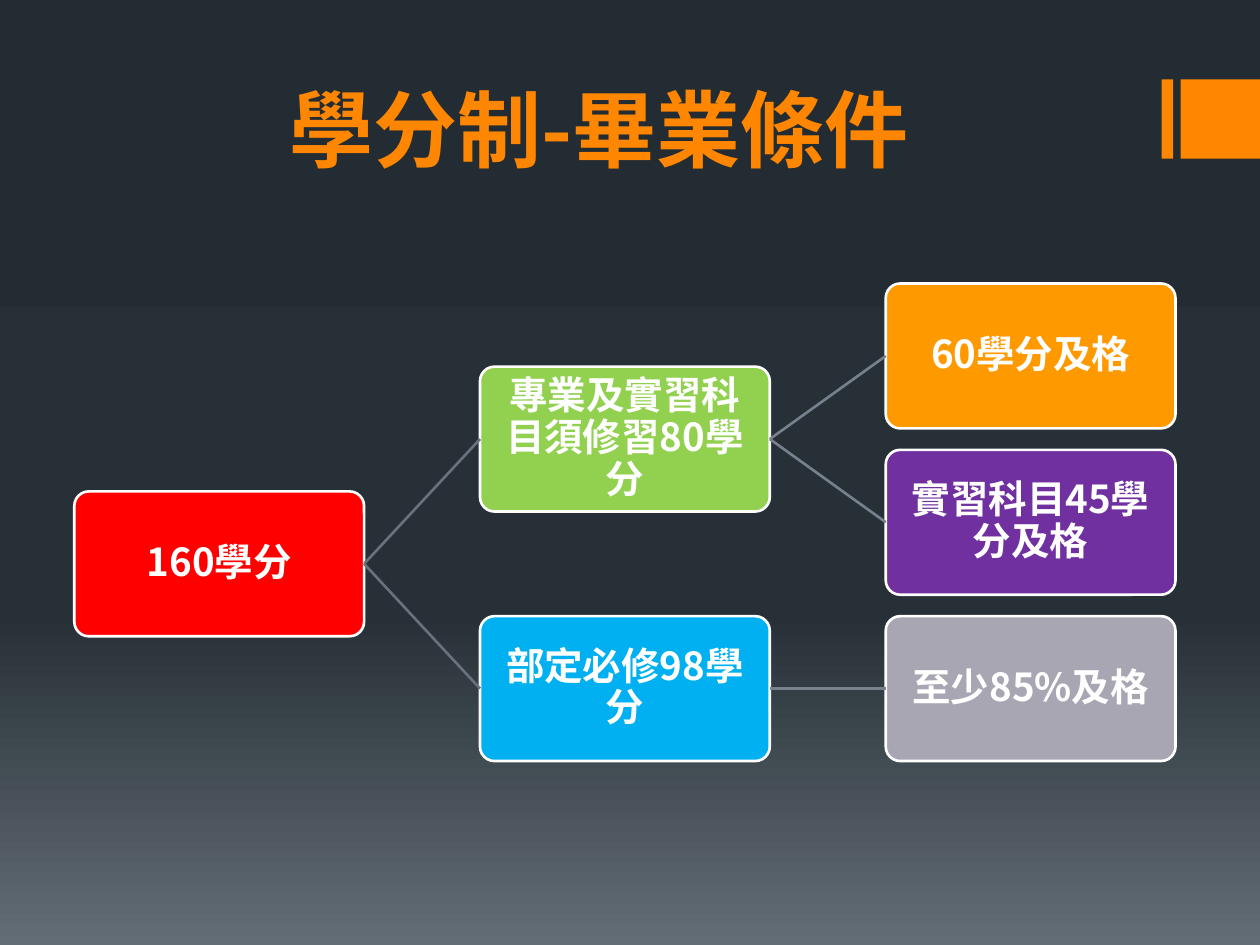
from copy import deepcopy
from dataclasses import dataclass

from pptx import Presentation
from pptx.dml.color import RGBColor
from pptx.enum.shapes import MSO_CONNECTOR as Connector, MSO_SHAPE as Shape
from pptx.enum.text import MSO_ANCHOR as Anchor, MSO_AUTO_SIZE as AutoSize, PP_ALIGN as Align
from pptx.oxml.ns import qn
from pptx.oxml.xmlchemy import OxmlElement
from pptx.util import Inches, Pt


@dataclass(frozen=True)
class Theme:
    """Colours, font and sizes of the slide."""
    font: str = "Noto Sans CJK SC"
    accent: str = "FF8600"
    white: str = "FFFFFF"
    background: tuple = ((0, "242C33"), (0.65, "273037"), (1, "636D76"))
    branches: tuple = ("69717C", "77808D")
    title_size: int = 48
    node_size: int = 22
    line_width: float = 1.5


THEME = Theme()
NODE_WIDTH, NODE_HEIGHT = 2.3, 1.15
TREE_LEFT, TREE_TOP = 0.59, 2.25
COLUMN_STEP, ROW_STEP = 3.22, 1.32
LEFT_SITE, RIGHT_SITE = 1, 3

NODES = {
    "total": ("160學分", 0, 1.25, "FF0000"),
    "professional": ("專業及實習科目須修習80學分", 1, 0.5, "92D050"),
    "professional_pass": ("60學分及格", 2, 0, "FF9900"),
    "practice_pass": ("實習科目45學分及格", 2, 1, "7030A0"),
    "required": ("部定必修98學分", 1, 2, "00B0F0"),
    "required_pass": ("至少85%及格", 2, 2, "A8A6B2"),
}
BRANCHES = (
    ("total", "professional"),
    ("total", "required"),
    ("professional", "professional_pass"),
    ("professional", "practice_pass"),
    ("required", "required_pass"),
)


def rgb(value):
    """Return a colour from its hex value."""
    return RGBColor.from_string(value)


def set_attributes(target, values):
    """Set each named attribute on the target."""
    for name, value in values.items():
        setattr(target, name, value)


def set_background(slide):
    """Fill the background with a vertical gradient."""
    fill = slide.background.fill
    fill.gradient()
    fill.gradient_angle = 270
    stop_list = slide.element.find(".//" + qn("a:gsLst"))
    stop_list.append(deepcopy(stop_list[-1]))
    for stop, (position, color) in zip(fill.gradient_stops, THEME.background):
        stop.position = position
        stop.color.rgb = rgb(color)


def write_text(shape, text, size, color, inset=None, line_spacing=1.0):
    """Write one centred bold paragraph into a shape."""
    frame = shape.text_frame
    set_attributes(frame, {
        "text": text,
        "word_wrap": True,
        "auto_size": AutoSize.NONE,
        "vertical_anchor": Anchor.MIDDLE,
    })
    if inset is not None:
        sides = ("left", "top", "right", "bottom")
        set_attributes(frame, {f"margin_{side}": Inches(inset) for side in sides})
    paragraph = frame.paragraphs[0]
    set_attributes(paragraph, {"alignment": Align.CENTER, "line_spacing": line_spacing})
    run = paragraph.runs[0]
    set_attributes(run.font, {"name": THEME.font, "size": Pt(size), "bold": True})
    run.font.color.rgb = rgb(color)
    east_asian = OxmlElement("a:ea")
    east_asian.set("typeface", THEME.font)
    run.font._element.find(qn("a:latin")).addnext(east_asian)


def add_title(slide, text):
    """Place and format the title."""
    title = slide.shapes.title
    set_attributes(title, {
        "left": Inches(1.97),
        "top": Inches(0.63),
        "width": Inches(5.57),
        "height": Inches(0.77),
    })
    write_text(title, text, THEME.title_size, THEME.accent)


def add_block(slide, kind, left, top, width, height, color):
    """Add a filled shape without line or shadow."""
    shape = slide.shapes.add_shape(
        kind, Inches(left), Inches(top), Inches(width), Inches(height))
    shape.shadow.inherit = False
    shape.fill.solid()
    shape.fill.fore_color.rgb = rgb(color)
    shape.line.fill.background()
    return shape


def add_node(slide, text, column, row, color):
    """Add a rounded box at a place in the tree grid."""
    node = add_block(
        slide, Shape.ROUNDED_RECTANGLE,
        TREE_LEFT + column * COLUMN_STEP, TREE_TOP + row * ROW_STEP,
        NODE_WIDTH, NODE_HEIGHT, color)
    node.adjustments[0] = 0.1
    node.line.color.rgb = rgb(THEME.white)
    node.line.width = Pt(THEME.line_width)
    write_text(node, text, THEME.node_size, THEME.white, inset=0.05, line_spacing=0.9)
    return node


def add_branch(slide, parent, child, color):
    """Join the right side of a parent to the left side of its child."""
    branch = slide.shapes.add_connector(Connector.STRAIGHT, 0, 0, 0, 0)
    branch.begin_connect(parent, RIGHT_SITE)
    branch.end_connect(child, LEFT_SITE)
    branch.line.color.rgb = rgb(color)
    branch.line.width = Pt(THEME.line_width)
    branch._element.spPr.append(OxmlElement("a:effectLst"))


def main():
    """Build and save the slide."""
    presentation = Presentation()
    set_attributes(presentation, {"slide_width": Inches(10), "slide_height": Inches(7.5)})
    slide = presentation.slides.add_slide(presentation.slide_layouts.get_by_name("Title Only"))
    set_background(slide)
    for left, width in ((9.22, 0.09), (9.37, 0.63)):
        add_block(slide, Shape.RECTANGLE, left, 0.63, width, 0.63, THEME.accent)
    add_title(slide, "學分制-畢業條件")
    nodes = {name: add_node(slide, *values) for name, values in NODES.items()}
    for parent, child in BRANCHES:
        level = NODES[parent][1]
        add_branch(slide, nodes[parent], nodes[child], THEME.branches[level])
    presentation.save("out.pptx")


if __name__ == "__main__":
    main()
